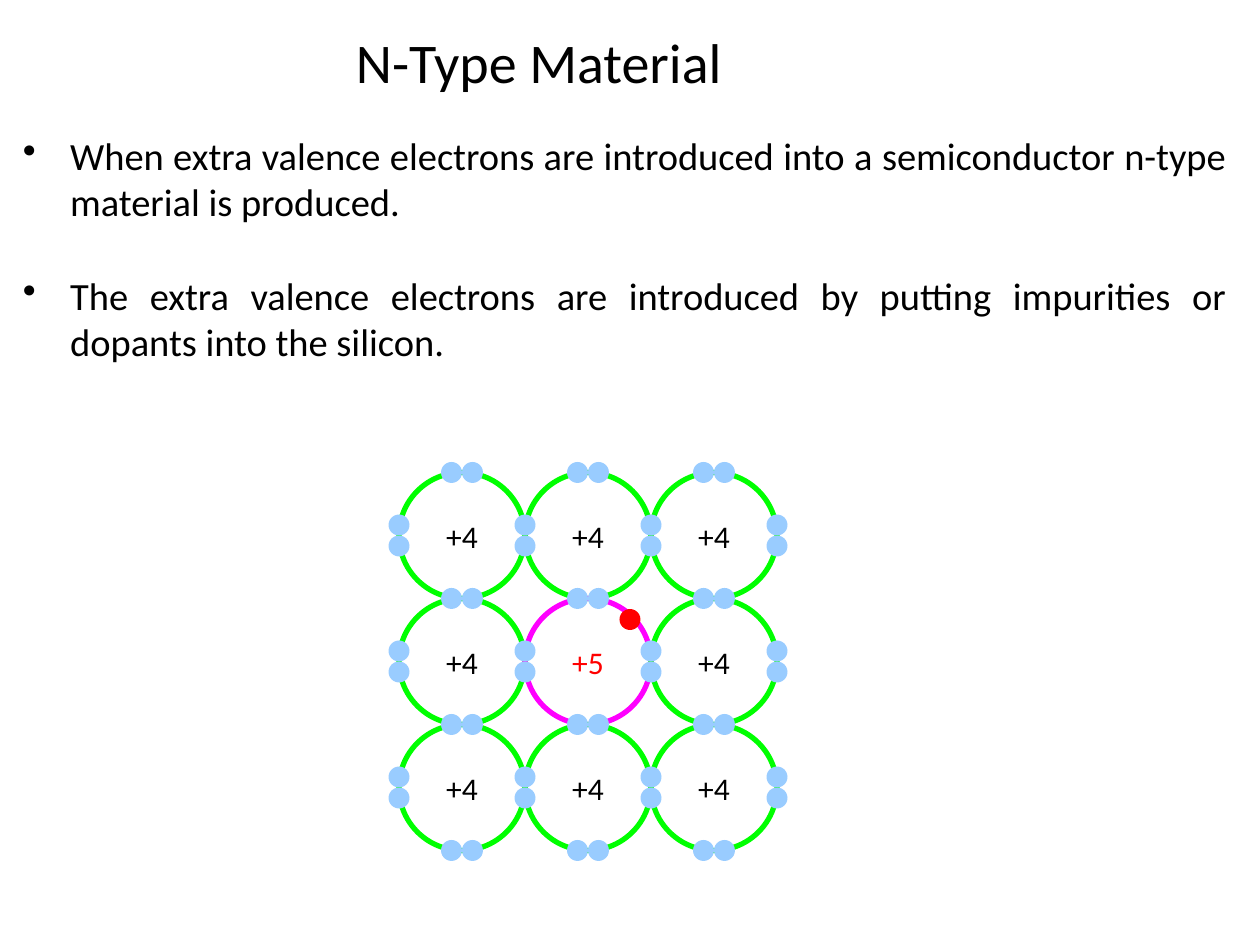
from itertools import product

from lxml.etree import SubElement
from pptx import Presentation
from pptx.dml.color import RGBColor
from pptx.enum.shapes import MSO_SHAPE as Shape
from pptx.enum.text import MSO_ANCHOR as Anchor, PP_ALIGN as Align
from pptx.oxml.ns import qn
from pptx.util import Pt

BLACK = RGBColor(0, 0, 0)
RED = RGBColor(255, 0, 0)
GREEN = RGBColor(0, 255, 0)
PINK = RGBColor(255, 0, 255)
BLUE = RGBColor(0x99, 0xCC, 0xFF)
FONT = "Calibri"
DOT = 12
POINTS = [
    "When extra valence electrons are introduced into a semiconductor n-type material is produced.",
    "The extra valence electrons are introduced by putting impurities or dopants into the silicon.",
]


def style(para, size, color, align):
    para.alignment = align
    for run in para.runs:
        run.font.name = FONT
        run.font.size = Pt(size)
        run.font.color.rgb = color


def add_frame(slide, box):
    frame = slide.shapes.add_textbox(*map(Pt, box)).text_frame
    frame.word_wrap = True
    return frame


def add_title(slide, box):
    frame = add_frame(slide, box)
    frame.text = "N-Type Material"
    style(frame.paragraphs[0], 32, BLACK, Align.CENTER)


def add_points(slide, box):
    frame = add_frame(slide, box)
    frame.text = "\n".join(POINTS)
    for index, para in enumerate(frame.paragraphs):
        style(para, 22, BLACK, Align.JUSTIFY)
        para.space_before = Pt(27 * index)
        props = para._p.get_or_add_pPr()
        props.set("marL", str(Pt(27)))
        props.set("indent", str(Pt(-27)))
        SubElement(props, qn("a:buChar")).set("char", "•")


def add_oval(slide, x, y, size):
    oval = slide.shapes.add_shape(Shape.OVAL, Pt(x), Pt(y), Pt(size), Pt(size))
    oval.shadow.inherit = False
    return oval


def add_atom(slide, x, y, size, label, ring, color):
    atom = add_oval(slide, x, y, size)
    atom.fill.background()
    atom.line.color.rgb = ring
    atom.line.width = Pt(3)
    frame = atom.text_frame
    frame.margin_left = frame.margin_right = 0
    frame.margin_top = frame.margin_bottom = 0
    frame.vertical_anchor = Anchor.MIDDLE
    frame.text = label
    style(frame.paragraphs[0], 18, color, Align.CENTER)


def add_dot(slide, x, y, color):
    dot = add_oval(slide, x, y, DOT)
    dot.fill.solid()
    dot.fill.fore_color.rgb = color
    dot.line.fill.background()


def add_lattice(slide, box, count=3):
    left, top, width, _ = box
    cell = width / count
    for row, col in product(range(count), repeat=2):
        kind = ("+5", PINK, RED) if row == col == 1 else ("+4", GREEN, BLACK)
        add_atom(slide, left + col * cell, top + row * cell, cell, *kind)
    for edge, lane, shift in product(range(count + 1), range(count), (-DOT, 0)):
        across = edge * cell - DOT / 2
        along = (lane + 0.5) * cell + shift
        add_dot(slide, left + across, top + along, BLUE)
        add_dot(slide, left + along, top + across, BLUE)
    add_dot(slide, left + 1.75 * cell, top + cell + DOT / 2, RED)


def main():
    deck = Presentation()
    deck.slide_width, deck.slide_height = Pt(720), Pt(540)
    slide = deck.slides.add_slide(deck.slide_layouts[6])
    add_title(slide, (20, 12, 576, 46))
    add_points(slide, (6, 72, 702, 140))
    add_lattice(slide, (228, 270, 216, 216))
    deck.save("out.pptx")


if __name__ == "__main__":
    main()
